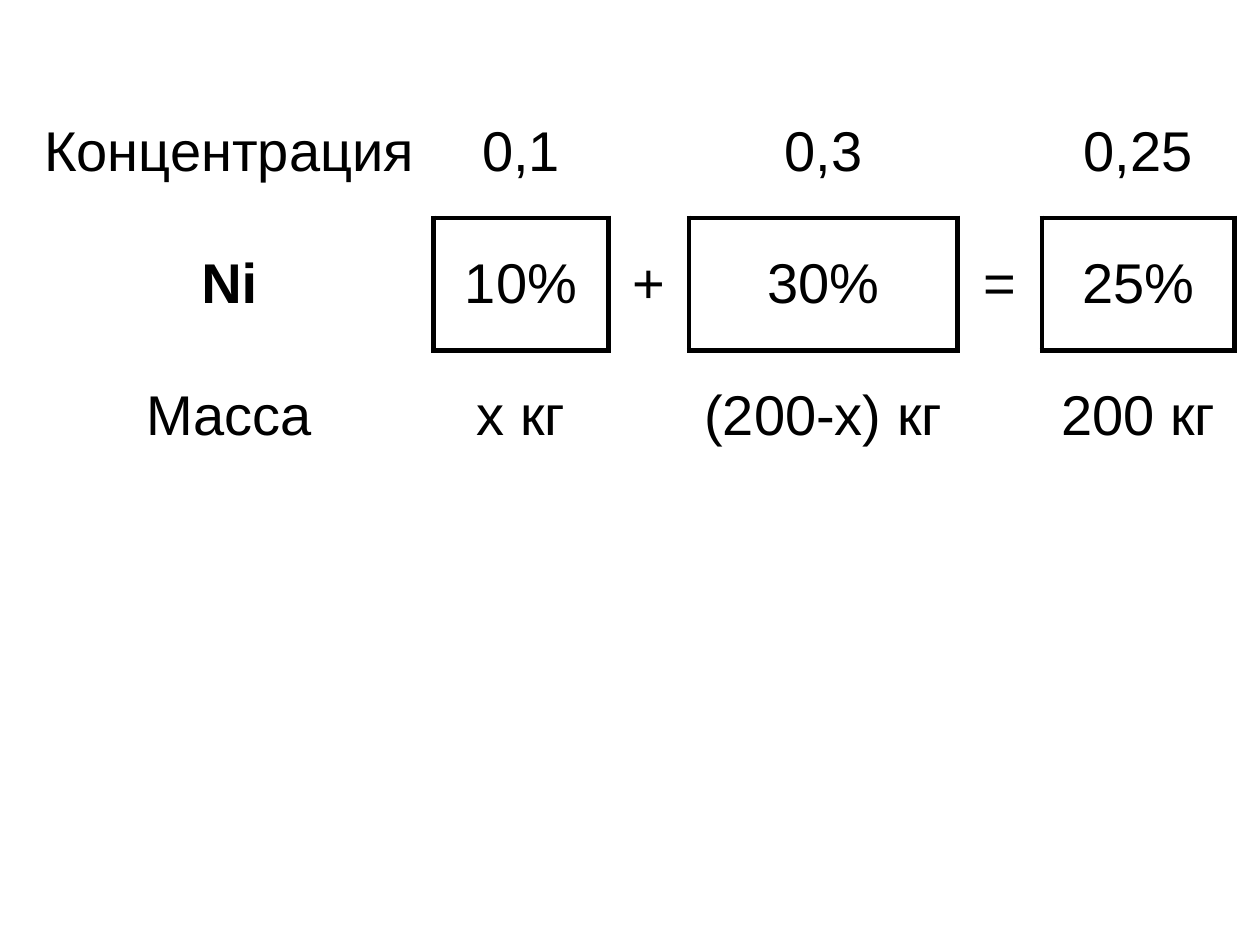
from dataclasses import dataclass

from lxml.etree import SubElement
from pptx import Presentation
from pptx.dml.color import RGBColor
from pptx.enum.text import MSO_ANCHOR, PP_ALIGN
from pptx.oxml.ns import qn
from pptx.util import Inches, Pt


@dataclass(frozen=True)
class Theme:
    """Fonts, sizes and colours of the slide."""
    font: str = "Arial"
    text_size: int = 32
    ink: str = "000000"
    border_width: int = 3


THEME = Theme()
MIXTURE = [
    ["Концентрация", "0,1", "", "0,3", "", "0,25"],
    ["Ni", "10%", "+", "30%", "=", "25%"],
    ["Масса", "х кг", "", "(200-х) кг", "", "200 кг"],
]
COLUMN_WIDTHS = [3.24, 1.39, 0.64, 2.13, 0.67, 1.53]
ALLOY_ROW = 1
ALLOY_COLUMNS = (1, 3, 5)
NEIGHBOURS = {"L": (0, -1), "R": (0, 1), "T": (-1, 0), "B": (1, 0)}


def is_alloy(row, column):
    """Tell whether a cell is one of the framed alloys."""
    return row == ALLOY_ROW and column in ALLOY_COLUMNS


def frame_cell(cell, row, column):
    """Draw the sides that touch a framed alloy and clear the others."""
    properties = cell._tc.get_or_add_tcPr()
    for side, (down, across) in NEIGHBOURS.items():
        border = SubElement(properties, qn(f"a:ln{side}"))
        if is_alloy(row, column) or is_alloy(row + down, column + across):
            border.set("w", str(Pt(THEME.border_width)))
            ink = SubElement(border, qn("a:solidFill"))
            SubElement(ink, qn("a:srgbClr")).set("val", THEME.ink)
        else:
            SubElement(border, qn("a:noFill"))
    cell.fill.background()


def write_cell(cell, wording, bold):
    """Centre the wording in a cell."""
    cell.vertical_anchor = MSO_ANCHOR.MIDDLE
    paragraph = cell.text_frame.paragraphs[0]
    paragraph.alignment = PP_ALIGN.CENTER
    if wording:
        run = paragraph.add_run()
        run.text = wording
        run.font.name = THEME.font
        run.font.size = Pt(THEME.text_size)
        run.font.bold = bold
        run.font.color.rgb = RGBColor.from_string(THEME.ink)


def add_mixture_table(slide, left, top, width, height):
    """Place the alloy mixture table in the given box."""
    mixture = slide.shapes.add_table(
        len(MIXTURE), len(COLUMN_WIDTHS), left, top, width, height
    ).table
    mixture.first_row = False
    mixture.horz_banding = False
    for column, share in zip(mixture.columns, COLUMN_WIDTHS):
        column.width = int(width * share / sum(COLUMN_WIDTHS))
    for row, wordings in enumerate(MIXTURE):
        for column, wording in enumerate(wordings):
            cell = mixture.cell(row, column)
            frame_cell(cell, row, column)
            write_cell(cell, wording, bold=(row, column) == (ALLOY_ROW, 0))


def main():
    """Build and save the slide."""
    deck = Presentation()
    deck.slide_width, deck.slide_height = Inches(10), Inches(7.5)
    slide = deck.slides.add_slide(deck.slide_layouts[6])
    add_mixture_table(slide, Inches(0.2), Inches(0.68), Inches(9.6), Inches(3.15))
    deck.save("out.pptx")


if __name__ == "__main__":
    main()
